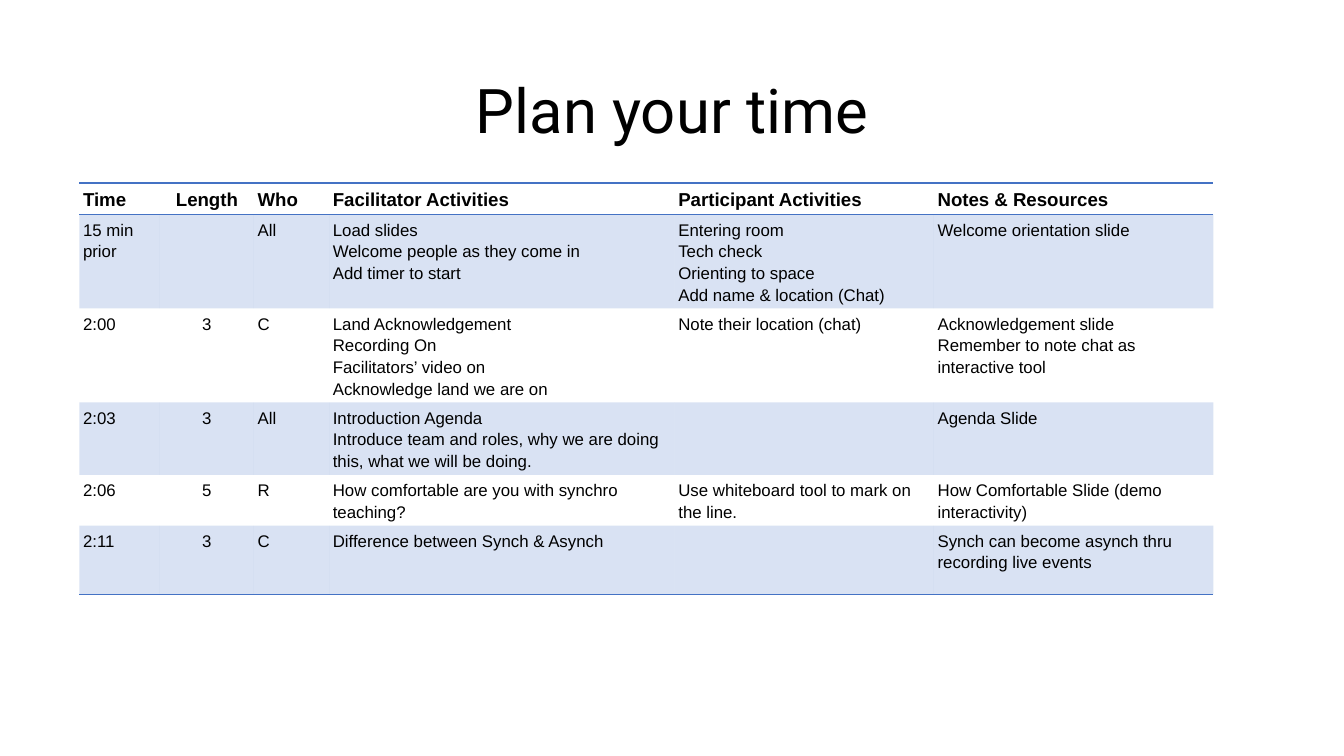
from lxml import etree
from pptx import Presentation
from pptx import util as u
from pptx.dml.color import RGBColor
from pptx.enum import text
from pptx.oxml import ns

BLACK = RGBColor(0, 0, 0)
BLUE = RGBColor(0x44, 0x72, 0xC4)
NO_STYLE = "{2D5ABB26-0587-4C30-8999-92F81FD0307C}"
COL_WIDTHS = [1.52, 1.78, 1.42, 6.53, 4.9, 5.28]
ROW_HEIGHTS = [0.59, 1.77, 1.77, 1.36, 0.95, 1.3]
LENGTH_COL = 1
AGENDA = [
    ["Time", "Length", "Who", "Facilitator Activities",
     "Participant Activities", "Notes & Resources"],
    ["15 min prior", "", "All",
     "Load slides\nWelcome people as they come in\nAdd timer to start",
     "Entering room\nTech check\nOrienting to space\nAdd name & location (Chat)",
     "Welcome orientation slide"],
    ["2:00", "3", "C",
     "Land Acknowledgement\nRecording On\nFacilitators’ video on\n"
     "Acknowledge land we are on",
     "Note their location (chat)",
     "Acknowledgement slide\vRemember to note chat as interactive tool"],
    ["2:03", "3", "All",
     "Introduction Agenda\nIntroduce team and roles, why we are doing this, "
     "what we will be doing.",
     "", "Agenda Slide"],
    ["2:06", "5", "R", "How comfortable are you with synchro teaching?",
     "Use whiteboard tool to mark on the line.",
     "How Comfortable Slide (demo interactivity)"],
    ["2:11", "3", "C", "Difference between Synch & Asynch", "",
     "Synch can become asynch thru recording live events"],
]


def format_paragraph(p, font, size, bold, align, spacing):
    p.alignment = align
    p.line_spacing = spacing
    for r in p.runs:
        r.font.name = font
        r.font.size = u.Pt(size)
        r.font.bold = bold
        r.font.color.rgb = BLACK


def add_border(cell, side):
    ln = etree.SubElement(cell._tc.get_or_add_tcPr(), ns.qn(f"a:ln{side}"),
                          w=str(u.Pt(1)))
    fill = etree.SubElement(ln, ns.qn("a:solidFill"))
    etree.SubElement(fill, ns.qn("a:srgbClr"), val=str(BLUE))


def tint(cell):
    cell.fill.solid()
    cell.fill.fore_color.rgb = BLUE
    color = cell._tc.tcPr.find(".//" + ns.qn("a:solidFill") + "[last()]/"
                               + ns.qn("a:srgbClr"))
    for color in cell._tc.tcPr.xpath("./a:solidFill/a:srgbClr"):
        etree.SubElement(color, ns.qn("a:alpha"), val="20000")


def format_cell(cell, row, col):
    cell.margin_left = cell.margin_right = u.Cm(0.07)
    cell.margin_top = cell.margin_bottom = u.Cm(0.07)
    header = row == 0
    align = text.PP_ALIGN.CENTER if col == LENGTH_COL else text.PP_ALIGN.LEFT
    for p in cell.text_frame.paragraphs:
        format_paragraph(p, "Arial", 10 if header else 9, header, align, 1.15)
    if header:
        add_border(cell, "T")
    if header or row == len(AGENDA) - 1:
        add_border(cell, "B")
    if row % 2:
        tint(cell)
    else:
        cell.fill.background()


def place_title(s, left, top, width, height):
    sp = s.shapes.title
    sp.left, sp.top, sp.width, sp.height = left, top, width, height
    tf = sp.text_frame
    tf.text = "Plan your time"
    tf.word_wrap = True
    tf.auto_size = text.MSO_AUTO_SIZE.NONE
    tf.vertical_anchor = text.MSO_ANCHOR.MIDDLE
    format_paragraph(tf.paragraphs[0], "Roboto", 33, False,
                     text.PP_ALIGN.CENTER, 0.9)


def place_agenda(s, left, top, width, height):
    frame = s.shapes.add_table(len(AGENDA), len(COL_WIDTHS),
                               left, top, width, height)
    frame.element.xpath(".//a:tableStyleId")[0].text = NO_STYLE
    table = frame.table
    table.horz_banding = False
    for column, share in zip(table.columns, COL_WIDTHS):
        column.width = int(width * share / sum(COL_WIDTHS))
    for row, share in zip(table.rows, ROW_HEIGHTS):
        row.height = int(height * share / sum(ROW_HEIGHTS))
    for i, entries in enumerate(AGENDA):
        for j, entry in enumerate(entries):
            cell = table.cell(i, j)
            cell.text_frame.text = entry
            format_cell(cell, i, j)


def main():
    prs = Presentation()
    prs.slide_width, prs.slide_height = u.Cm(25.4), u.Cm(14.29)
    s = prs.slides.add_slide(prs.slide_layouts[5])
    place_title(s, u.Cm(1.75), u.Cm(0.76), u.Cm(21.9), u.Cm(2.77))
    place_agenda(s, u.Cm(1.5), u.Cm(3.46), u.Cm(21.43), u.Cm(7.74))
    prs.save("out.pptx")


if __name__ == "__main__":
    main()
